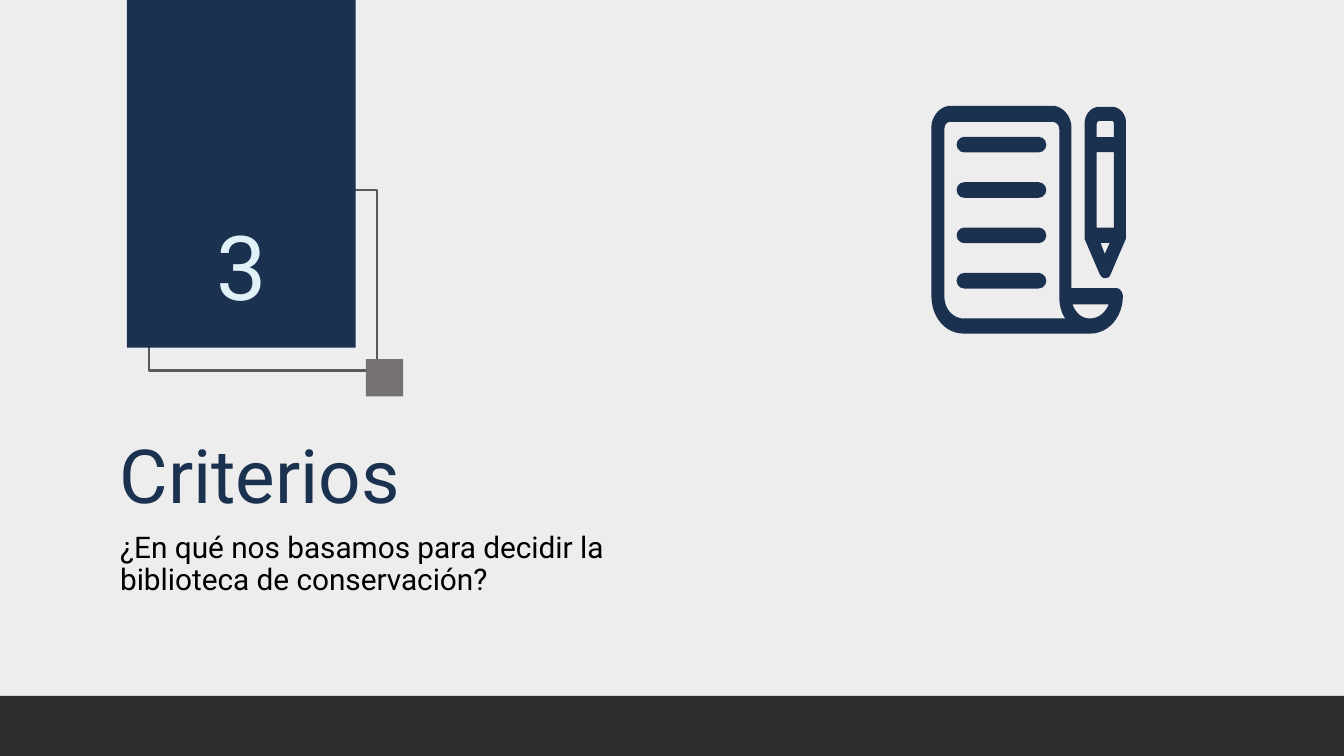
from pptx import Presentation
from pptx.dml.color import RGBColor
from pptx.enum.shapes import MSO_SHAPE
from pptx.enum.text import MSO_ANCHOR, PP_ALIGN
from pptx.util import Pt

NAVY = RGBColor(0x1A, 0x31, 0x4F)
PALE_BLUE = RGBColor(0xE0, 0xF1, 0xF8)
BACKGROUND = RGBColor(0xED, 0xED, 0xED)
FOOTER = RGBColor(0x2D, 0x2D, 0x2D)
FRAME = RGBColor(0x59, 0x59, 0x59)
GREY = RGBColor(0x76, 0x71, 0x71)
BLACK = RGBColor(0, 0, 0)

# Contours in points: a pair is a corner, six numbers are a Bezier curve
SHEET = [
    [(679, 75.6), (671.8, 75.6, 665.3, 82.8, 665.3, 91.4), (665.3, 211),
     (665.3, 226.8, 675.4, 238.3, 688.3, 238.3), (779, 238.3),
     (792, 238.3, 802.1, 226.1, 802.1, 211.7),
     (802.1, 208.8, 799.9, 205.9, 797.8, 205.9), (765.4, 205.9),
     (765.4, 91.4), (765.4, 82.8, 758.9, 75.6, 751.7, 75.6)],
    [(751.7, 87.1), (754.6, 87.1, 756.7, 89.3, 756.7, 92.9), (756.7, 211.7),
     (756.7, 218.2, 758.2, 223.9, 761, 227.5), (688.3, 227.5),
     (681.1, 227.5, 674.6, 221, 674.6, 211.7), (674.6, 92.9),
     (674.6, 89.3, 676.1, 87.1, 679, 87.1)],
    [(792, 217.4), (789.8, 223.2, 784.8, 227.5, 778.3, 227.5),
     (772.6, 227.5, 768.2, 223.2, 766.1, 217.4)],
]
PENCIL = [
    [(785.5, 76.3), (779, 76.3, 774.7, 82.1, 774.7, 88.6), (774.7, 170.6),
     (785.5, 195.8), (787, 198, 787.7, 198.7, 789.1, 198.7),
     (791.3, 198.7, 792.7, 198, 793.4, 195.8), (804.2, 170.6),
     (804.2, 88.6), (805, 82.1, 799.9, 76.3, 794.2, 76.3)],
    [(794.2, 86.4), (795.6, 86.4, 795.6, 87.8, 795.6, 88.6), (795.6, 97.9),
     (783.4, 97.9), (783.4, 88.6), (783.4, 87.8, 784.1, 86.4, 785.5, 86.4)],
    [(795.6, 108.7), (795.6, 162.7), (783.4, 162.7), (783.4, 108.7)],
    [(792.7, 173.5), (789.1, 181.4), (786.2, 173.5)],
]


def flatten(contour, steps=12):
    """Turn a contour into a list of points, sampling its curves."""
    points = [contour[0]]
    for segment in contour[1:]:
        if len(segment) == 2:
            points.append(segment)
            continue
        curve = (points[-1], segment[:2], segment[2:4], segment[4:])
        for step in range(1, steps + 1):
            t = step / steps
            weights = ((1 - t) ** 3, 3 * t * (1 - t) ** 2, 3 * t * t * (1 - t), t ** 3)
            points.append(tuple(sum(weight * point[axis] for weight, point in zip(weights, curve))
                                for axis in (0, 1)))
    return [(Pt(x), Pt(y)) for x, y in points]


class SlideBuilder:
    def __init__(self, page, font="Roboto", inset=9.6, spacing=0.9):
        self.page = page
        self.font = font
        self.inset = Pt(inset)
        self.spacing = spacing

    def paint(self, shape, fill=None, line=None, width=1.5):
        shape.shadow.inherit = False
        if fill is None:
            shape.fill.background()
        else:
            shape.fill.solid()
            shape.fill.fore_color.rgb = fill
        if line is None:
            shape.line.fill.background()
        else:
            shape.line.color.rgb = line
            shape.line.width = Pt(width)

    def block(self, left, top, width, height, kind=MSO_SHAPE.RECTANGLE, **style):
        shape = self.page.shapes.add_shape(kind, Pt(left), Pt(top), Pt(width), Pt(height))
        self.paint(shape, **style)
        return shape

    def outline(self, contours, **style):
        first, *holes = [flatten(contour) for contour in contours]
        builder = self.page.shapes.build_freeform(*first[0])
        builder.add_line_segments(first[1:], close=True)
        for hole in holes:
            builder.move_to(*hole[0])
            builder.add_line_segments(hole[1:], close=True)
        self.paint(builder.convert_to_shape(), **style)

    def text(self, text, left, top, width, height, size, color,
             align=PP_ALIGN.LEFT, anchor=MSO_ANCHOR.TOP):
        box = self.page.shapes.add_textbox(Pt(left), Pt(top), Pt(width), Pt(height))
        frame = box.text_frame
        frame.word_wrap = True
        frame.vertical_anchor = anchor
        frame.margin_left = frame.margin_right = self.inset
        frame.margin_top = frame.margin_bottom = self.inset
        para = frame.paragraphs[0]
        para.alignment = align
        para.line_spacing = self.spacing
        span = para.add_run()
        span.text = text
        span.font.name = self.font
        span.font.size = Pt(size)
        span.font.color.rgb = color


def main():
    deck = Presentation()
    deck.slide_width, deck.slide_height = Pt(960), Pt(540)
    page = deck.slides.add_slide(deck.slide_layouts[6])
    page.background.fill.solid()
    page.background.fill.fore_color.rgb = BACKGROUND
    slide = SlideBuilder(page)

    # Footer band and section number panel
    slide.block(0, 497, 960, 43, fill=FOOTER)
    slide.block(106.5, 135.7, 163, 129, line=FRAME)
    slide.block(90.7, 0, 163.3, 248.4, fill=NAVY)
    slide.block(261.4, 256.6, 26.6, 26.6, fill=GREY)

    # Section number, title and question
    slide.text("3", 69, 136, 206.6, 102.2, 64, PALE_BLUE,
               align=PP_ALIGN.CENTER, anchor=MSO_ANCHOR.BOTTOM)
    slide.text("Criterios", 75.9, 304, 582, 85, 53.3, NAVY)
    slide.text("¿En qué nos basamos para decidir la biblioteca de conservación?",
               76.2, 371, 411, 98.6, 21.3, BLACK)

    # Icon: sheet with four written lines, and a pencil
    slide.outline(SHEET, fill=NAVY)
    for row in range(4):
        bar = slide.block(683.3, 97.7 + 32.4 * row, 64.1, 11.2,
                          kind=MSO_SHAPE.ROUNDED_RECTANGLE, fill=NAVY)
        bar.adjustments[0] = 0.5
    slide.outline(PENCIL, fill=NAVY)

    deck.save("out.pptx")


if __name__ == "__main__":
    main()
